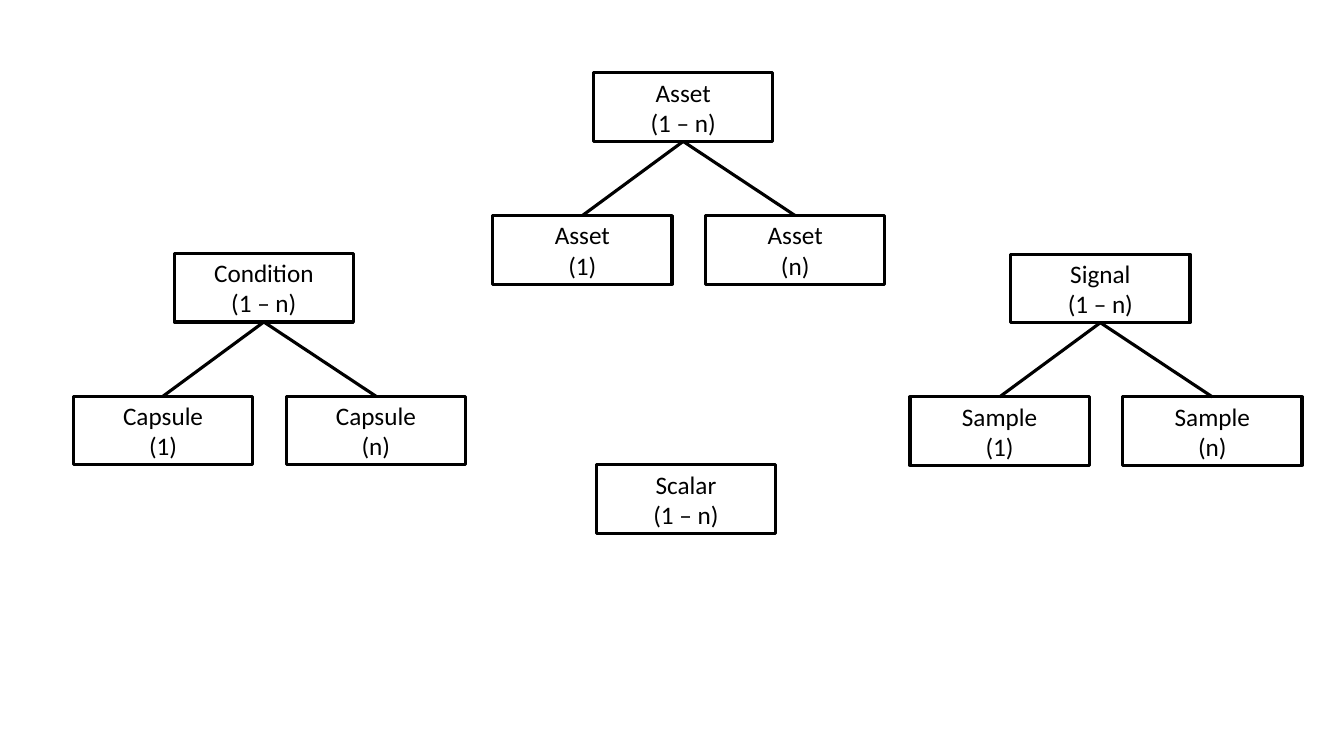
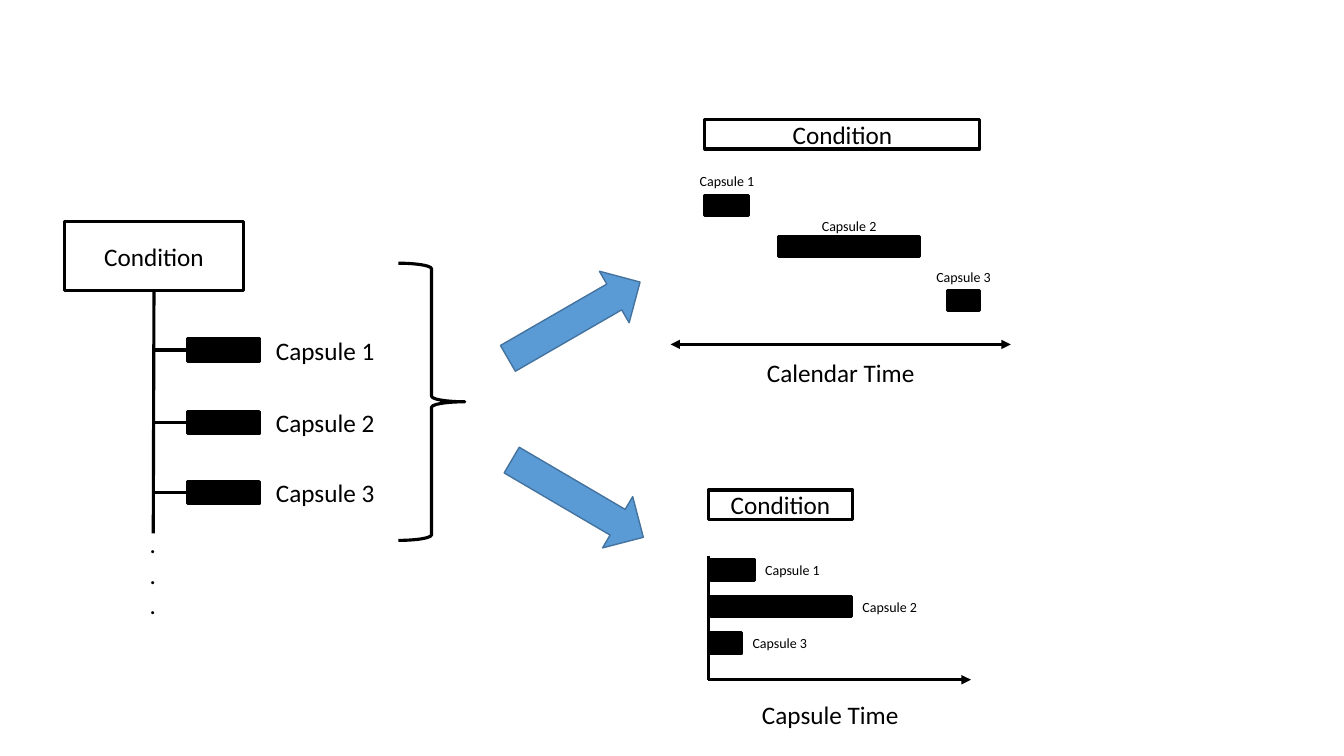
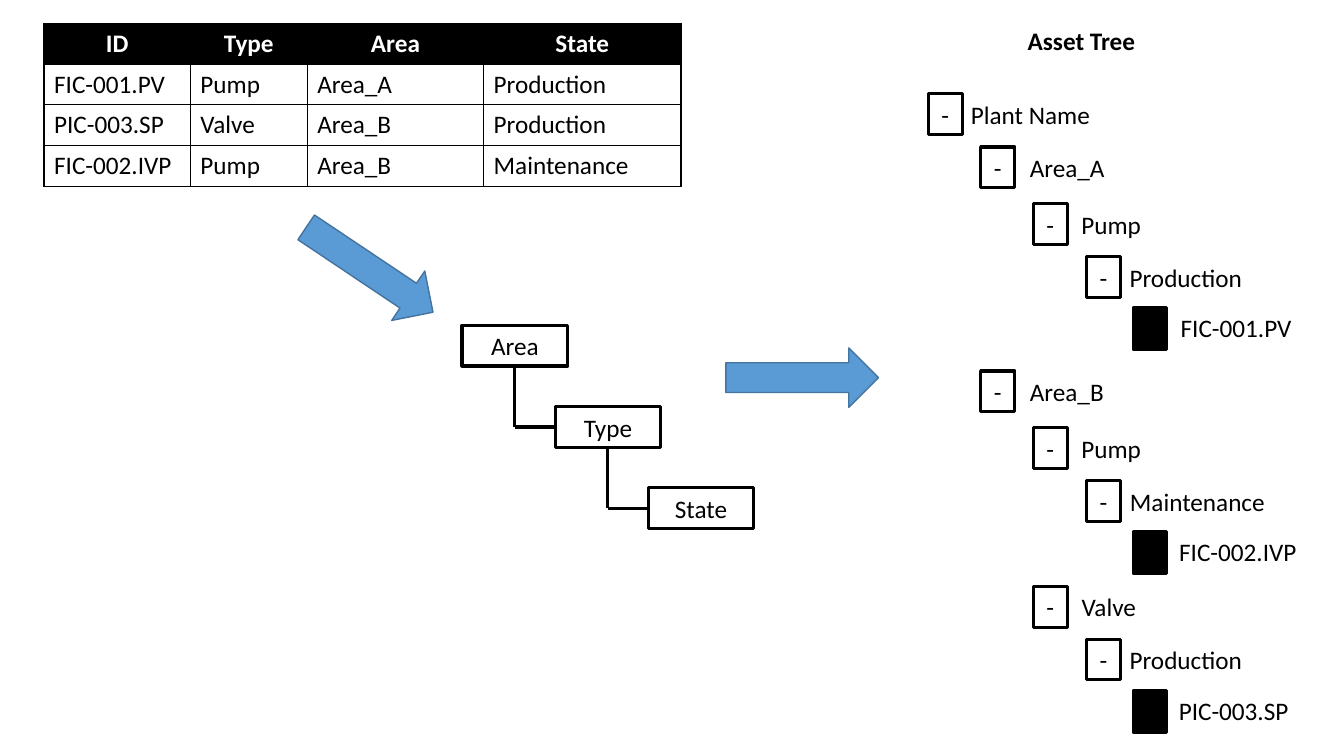
import dataclasses

import lxml.etree
import pptx
import pptx.dml.color
import pptx.enum.shapes
import pptx.enum.text
import pptx.oxml.ns
import pptx.util

Pt = pptx.util.Pt
RGB = pptx.dml.color.RGBColor.from_string
Shape = pptx.enum.shapes.MSO_SHAPE
Align = pptx.enum.text.PP_ALIGN
Anchor = pptx.enum.text.MSO_ANCHOR
qn = pptx.oxml.ns.qn
TOP, LEFT, BOTTOM = 0, 1, 2


@dataclasses.dataclass(frozen=True)
class Theme:
    font: str = "Calibri"
    ink: str = "000000"
    paper: str = "FFFFFF"
    blue: str = "5B9BD5"
    edge: str = "43739E"
    body: float = 18
    small: float = 10
    stroke: float = 2.25
    thin: float = 1


THEME = Theme()


def write(frame, text, size=THEME.body, color=THEME.ink, bold=False, align=Align.CENTER):
    for i, line in enumerate(text.split("\n")):
        para = frame.paragraphs[0] if i == 0 else frame.add_paragraph()
        para.alignment = align
        run = para.add_run()
        run.text = line
        run.font.name = THEME.font
        run.font.size = Pt(size)
        run.font.bold = bold
        run.font.color.rgb = RGB(color)


def center(frame):
    frame.word_wrap = False
    frame.vertical_anchor = Anchor.MIDDLE
    frame.margin_left = frame.margin_right = 0
    frame.margin_top = frame.margin_bottom = 0


class Deck:
    def __init__(self, theme):
        self.theme = theme
        self.file = pptx.Presentation()
        self.file.slide_width = Pt(960)
        self.file.slide_height = Pt(540)
        self.slide = None

    def page(self):
        self.slide = self.file.slides.add_slide(self.file.slide_layouts[6])

    def shape(self, kind, x, y, w, h, fill=None, line=THEME.ink, stroke=THEME.stroke):
        item = self.slide.shapes.add_shape(kind, Pt(x), Pt(y), Pt(w), Pt(h))
        item.shadow.inherit = False
        if fill:
            item.fill.solid()
            item.fill.fore_color.rgb = RGB(fill)
        else:
            item.fill.background()
        item.line.color.rgb = RGB(line)
        item.line.width = Pt(stroke)
        return item

    def box(self, x, y, w, h, text):
        item = self.shape(Shape.RECTANGLE, x, y, w, h)
        center(item.text_frame)
        write(item.text_frame, text)
        return item

    def bar(self, x, y, w, h):
        return self.shape(Shape.RECTANGLE, x, y, w, h, fill=self.theme.ink)

    def arrow(self, x, y, turn=0):
        item = self.shape(Shape.RIGHT_ARROW, x, y, 109, 42.5, fill=self.theme.blue,
                          line=self.theme.edge, stroke=self.theme.thin)
        item.rotation = turn

    def label(self, text, x, y, w, h=29, **style):
        item = self.slide.shapes.add_textbox(Pt(x), Pt(y), Pt(w), Pt(h))
        center(item.text_frame)
        write(item.text_frame, text, **style)

    def line(self, start, end, tips=()):
        kind = pptx.enum.shapes.MSO_CONNECTOR.STRAIGHT
        item = self.slide.shapes.add_connector(kind, *(Pt(v) for v in (*start, *end)))
        item.line.color.rgb = RGB(self.theme.ink)
        item.line.width = Pt(self.theme.stroke)
        for tip in tips:
            mark = lxml.etree.SubElement(item.line._get_or_add_ln(), qn(f"a:{tip}"))
            mark.set("type", "triangle")
        lxml.etree.SubElement(item._element.spPr, qn("a:effectLst"))
        return item

    def link(self, first, last, side=TOP):
        item = self.line((0, 0), (0, 0))
        item.begin_connect(first, BOTTOM)
        item.end_connect(last, side)

    def step(self, first, last):
        x = (first.left + first.width / 2) / Pt(1)
        y = (last.top + last.height / 2) / Pt(1)
        self.line((x, y), (x, y)).begin_connect(first, BOTTOM)
        self.line((x, y), (x, y)).end_connect(last, LEFT)

    def frame(self, cell):
        props = cell._tc.get_or_add_tcPr()
        for side in ("lnL", "lnR", "lnT", "lnB"):
            edge = lxml.etree.SubElement(props, qn(f"a:{side}"), w=str(Pt(self.theme.thin)))
            fill = lxml.etree.SubElement(edge, qn("a:solidFill"))
            lxml.etree.SubElement(fill, qn("a:srgbClr"), val=self.theme.ink)

    def table(self, x, y, widths, high, rows):
        grid = self.slide.shapes.add_table(len(rows), len(widths), Pt(x), Pt(y),
                                           Pt(sum(widths)), Pt(high * len(rows))).table
        grid.horz_banding = False
        for col, width in zip(grid.columns, widths):
            col.width = Pt(width)
        for r, row in enumerate(rows):
            grid.rows[r].height = Pt(high)
            head = r == 0
            for c, text in enumerate(row):
                cell = grid.cell(r, c)
                self.frame(cell)
                cell.fill.solid()
                cell.fill.fore_color.rgb = RGB(self.theme.ink if head else self.theme.paper)
                write(cell.text_frame, text, bold=head,
                      color=self.theme.paper if head else self.theme.ink,
                      align=Align.CENTER if head else Align.LEFT)


def types(deck):
    deck.page()
    wide, high = 128, 49
    for x, y, root, leaf in (
        (124.5, 181, "Condition", "Capsule"),
        (424, 52, "Asset", "Asset"),
        (722, 181.5, "Signal", "Sample"),
    ):
        top = deck.box(x, y, wide, high, f"{root}\n(1 – n)")
        for shift, count in ((-72, "1"), (80, "n")):
            child = deck.box(x + shift, y + 102, wide, high, f"{leaf}\n({count})")
            deck.link(top, child)
    deck.box(426, 332, wide, high, "Scalar\n(1 – n)")


def times(deck):
    deck.page()
    root = deck.box(46, 158.5, 128, 49, "Condition")
    spine = deck.line((110, 207.5), (109.5, 381))
    spine.begin_connect(root, BOTTOM)
    for i, y in enumerate((250, 302, 352), 1):
        bar = deck.bar(134, y - 8, 51, 16)
        deck.line((110, y), (134, y)).end_connect(bar, LEFT)
        deck.label(f"Capsule {i}", 189.5, y - 14.5, 85.5)
    deck.label(".\n.\n.", 98.5, 373.5, 21.5, 73)
    deck.shape(Shape.RIGHT_BRACE, 284.5, 188, 47.5, 198)
    deck.arrow(355.5, 207.5, 330)
    deck.arrow(358, 335, 30.4)

    spans = (31.5, 101, 22.5)
    tag = {"w": 54, "h": 19.5, "size": deck.theme.small}
    deck.box(503.5, 85.5, 196.5, 21, "Condition")
    places = ((503.5, 139.5, 20), (556, 169, 17), (677, 207.5, 19.5))
    for i, ((x, y, rise), span) in enumerate(zip(places, spans), 1):
        deck.bar(x, y, span, 14.5)
        deck.label(f"Capsule {i}", x + span / 2 - 27, y - rise, **tag)
    deck.line((479, 246), (722, 246), ("headEnd", "tailEnd"))
    deck.label("Calendar Time", 540, 251.5, 121)

    deck.box(506, 350, 103, 21, "Condition")
    for i, span in enumerate(spans):
        y = 400 + 26 * i
        deck.bar(507.5, y, span, 14.5)
        deck.label(f"Capsule {i + 1}", 507.5 + span, y - 2.5, **tag)
    deck.line((506, 397.5), (506, 485.5))
    deck.line((506, 485.5), (693.5, 485.5), ("tailEnd",))
    deck.label("Capsule Time", 536.5, 496, 113)


def assets(deck):
    deck.page()
    deck.table(31.5, 16.5, (104.5, 83.5, 126, 141), 29.2, (
        ("ID", "Type", "Area", "State"),
        ("FIC-001.PV", "Pump", "Area_A", "Production"),
        ("PIC-003.SP", "Valve", "Area_B", "Production"),
        ("FIC-002.IVP", "Pump", "Area_B", "Maintenance"),
    ))
    steps = [deck.box(330 + 66.5 * i, 232.5 + 58 * i, 75.5, 29, text)
             for i, text in enumerate(("Area", "Type", "State"))]
    for first, last in zip(steps, steps[1:]):
        deck.step(first, last)
    deck.arrow(209.5, 171.5, 33.8)
    deck.arrow(518.5, 248.5)

    deck.label("Asset Tree", 726.5, 14.5, 92, bold=True)
    levels = ((663, 685.5), (700.5, 728), (738, 765), (776, 799), (810, 834.5))
    for depth, y, text, width in (
        (0, 67, "Plant Name", 101),
        (1, 105, "Area_A", 68.5),
        (2, 145.5, "Pump", 57.5),
        (3, 183.5, "Production", 96),
        (4, 219.5, "FIC-001.PV", 97),
        (1, 265, "Area_B", 68),
        (2, 305.5, "Pump", 57.5),
        (3, 343.5, "Maintenance", 112.5),
        (4, 379.5, "FIC-002.IVP", 99.5),
        (2, 419, "Valve", 54),
        (3, 456.5, "Production", 96),
        (4, 493, "PIC-003.SP", 93.5),
    ):
        x, left = levels[depth]
        if depth == 4:
            deck.bar(x, y, 23, 30.5)
        else:
            deck.box(x, y, 24.5, 29, "-")
        deck.label(text, left, y, width)


def main():
    deck = Deck(THEME)
    types(deck)
    times(deck)
    assets(deck)
    deck.file.save("out.pptx")


if __name__ == "__main__":
    main()
